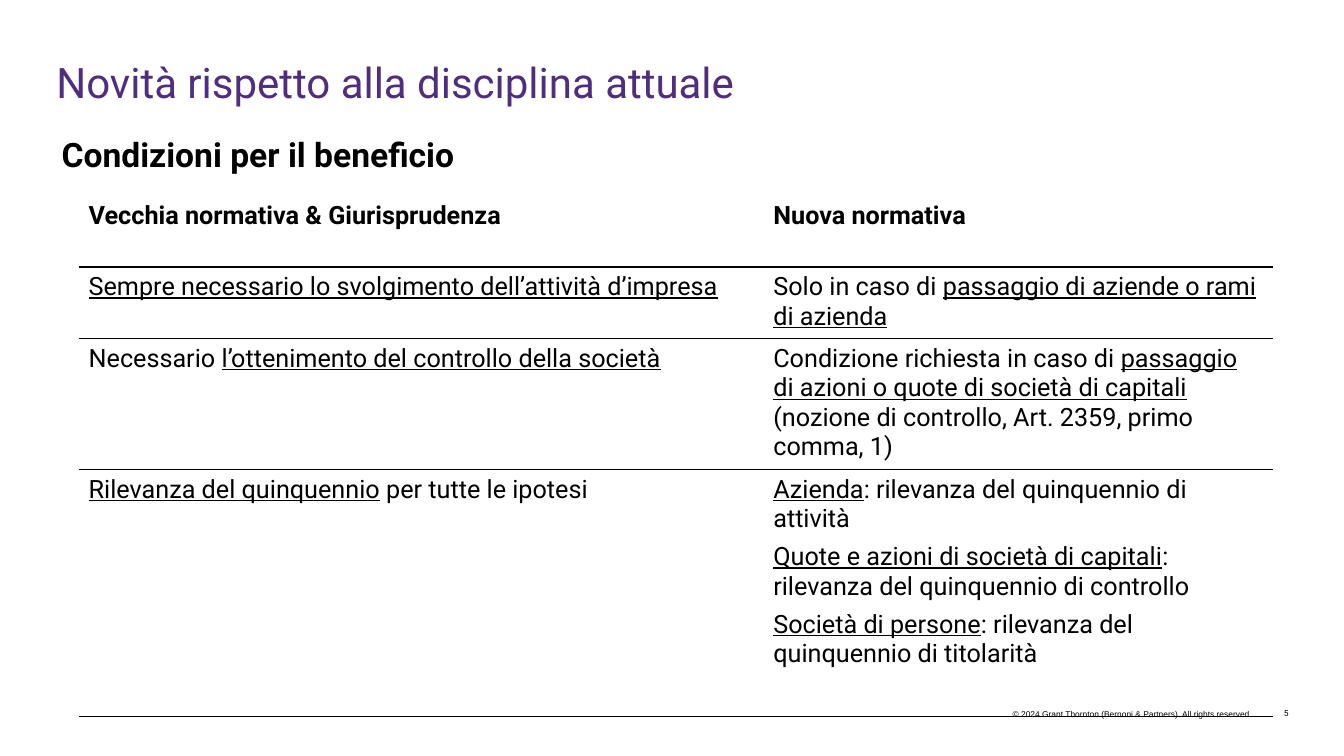
from lxml.etree import SubElement
from pptx import Presentation
from pptx.dml.color import RGBColor
from pptx.enum.text import MSO_ANCHOR, MSO_AUTO_SIZE, PP_ALIGN
from pptx.oxml.ns import qn
from pptx.util import Inches, Pt

PURPLE = RGBColor(0x4F, 0x2D, 0x7F)
BLACK = RGBColor(0, 0, 0)

# Underscores enclose the underlined words; each cell is a list of paragraphs
TABLE_ROWS = [
    (["Vecchia normativa & Giurisprudenza"], ["Nuova normativa"]),
    (["_Sempre necessario lo svolgimento dell’attività d’impresa_"],
     ["Solo in caso di _passaggio di aziende o rami di azienda_"]),
    (["Necessario _l’ottenimento del controllo della società_"],
     ["Condizione richiesta in caso di _passaggio di azioni o quote di società di capitali_"
      " (nozione di controllo, Art. 2359, primo comma, 1)"]),
    (["_Rilevanza del quinquennio_ per tutte le ipotesi"],
     ["_Azienda_: rilevanza del quinquennio di attività",
      "_Quote e azioni di società di capitali_: rilevanza del quinquennio di controllo",
      "_Società di persone_: rilevanza del quinquennio di titolarità"]),
    ([""], [""]),
]
COLUMN_WIDTHS = [50.94, 37.96]
ROW_HEIGHTS = [9.33, 9.47, 17.33, 27.07, 5.6]
RULED_EDGES = {1, 2, 3, 5}  # horizontal edges counted from the table's top


class SlideBuilder:
    """Places elements on a grid of 100 columns by 100 rows."""

    def __init__(self, deck, font_name="Roboto"):
        self.page = deck.slides.add_slide(deck.slide_layouts[1])
        self.column = deck.slide_width / 100
        self.row = deck.slide_height / 100
        self.font_name = font_name

    def area(self, left, top, width, height):
        return (round(left * self.column), round(top * self.row),
                round(width * self.column), round(height * self.row))

    def style(self, para, size, color=BLACK, bold=False, align=PP_ALIGN.LEFT,
              after=6, font_name=None):
        para.alignment = align
        para.space_before = Pt(0)
        para.space_after = Pt(after)
        font = para.font
        font.name = font_name or self.font_name
        font.size = Pt(size)
        font.bold = bold
        font.color.rgb = color

    def frame(self, box, anchor, margins, wrap=True):
        text_frame = box.text_frame
        text_frame.word_wrap = wrap
        text_frame.auto_size = MSO_AUTO_SIZE.NONE
        text_frame.vertical_anchor = anchor
        text_frame.margin_left = text_frame.margin_right = Inches(margins[0])
        text_frame.margin_top = text_frame.margin_bottom = Inches(margins[1])
        return text_frame

    def place(self, box, area):
        box.left, box.top, box.width, box.height = self.area(*area)

    def title(self, text, area):
        box = self.page.shapes.title
        self.place(box, area)
        para = self.frame(box, MSO_ANCHOR.TOP, (0, 0)).paragraphs[0]
        para.text = text
        para.line_spacing = Pt(36)
        self.style(para, 30, PURPLE, after=0)

    def subtitle(self, text, area):
        box = self.page.placeholders[1]
        self.place(box, area)
        para = self.frame(box, MSO_ANCHOR.TOP, (0.1, 0.05)).paragraphs[0]
        para.text = text
        properties = para._p.get_or_add_pPr()
        properties.set("marL", "0")
        properties.set("indent", "0")
        SubElement(properties, qn("a:buNone"))
        self.style(para, 24, bold=True)

    def footer(self, text, area, anchor, margins, wrap, font_name):
        box = self.page.shapes.add_textbox(*self.area(*area))
        para = self.frame(box, anchor, margins, wrap).paragraphs[0]
        para.text = text
        self.style(para, 6, align=PP_ALIGN.RIGHT, font_name=font_name)

    def table(self, rows, left, top, widths, heights):
        area = self.area(left, top, sum(widths), sum(heights))
        table = self.page.shapes.add_table(len(rows), len(widths), *area).table
        table.first_row = table.horz_banding = False
        for column, width in zip(table.columns, widths):
            column.width = round(width * self.column)
        for row, height in zip(table.rows, heights):
            row.height = round(height * self.row)
        for row_index, row in enumerate(rows):
            for column_index, paragraphs in enumerate(row):
                cell = table.cell(row_index, column_index)
                self.borders(cell, row_index)
                cell.fill.background()
                self.cell_text(cell, paragraphs, bold=row_index == 0)

    def borders(self, cell, row_index):
        ruled = {"a:lnL": False, "a:lnR": False,
                 "a:lnT": row_index in RULED_EDGES,
                 "a:lnB": row_index + 1 in RULED_EDGES}
        properties = cell._tc.get_or_add_tcPr()
        for tag, visible in ruled.items():
            line = SubElement(properties, qn(tag), w=str(Pt(1)))
            if visible:
                fill = SubElement(line, qn("a:solidFill"))
                SubElement(fill, qn("a:srgbClr"), val=str(BLACK))
            else:
                SubElement(line, qn("a:noFill"))

    def cell_text(self, cell, paragraphs, bold):
        text_frame = cell.text_frame
        for index, text in enumerate(paragraphs):
            para = text_frame.add_paragraph() if index else text_frame.paragraphs[0]
            for part_index, part in enumerate(text.split("_")):
                if part:
                    span = para.add_run()
                    span.text = part
                    span.font.underline = part_index % 2 == 1
            self.style(para, 18, bold=bold)


def main():
    deck = Presentation()
    deck.slide_width, deck.slide_height = Inches(13.33), Inches(7.5)
    builder = SlideBuilder(deck)

    # Headings
    builder.title("Novità rispetto alla disciplina attuale", (4.2, 7.47, 76.07, 6.67))
    builder.subtitle("Condizioni per il beneficio", (3.83, 17.07, 92.05, 29.6))

    # Comparison of old and new rules
    builder.table(TABLE_ROWS, 5.85, 26, COLUMN_WIDTHS, ROW_HEIGHTS)

    # Footer
    builder.footer("5", (92.95, 93.73, 2.93, 1.33), MSO_ANCHOR.BOTTOM, (0, 0), False, "Roboto")
    builder.footer("© 2024 Grant Thornton (Bernoni & Partners). All rights reserved",
                   (60.62, 93.2, 33.08, 3.07), MSO_ANCHOR.TOP, (0.1, 0.05), True, "Arial")

    deck.save("out.pptx")


if __name__ == "__main__":
    main()
